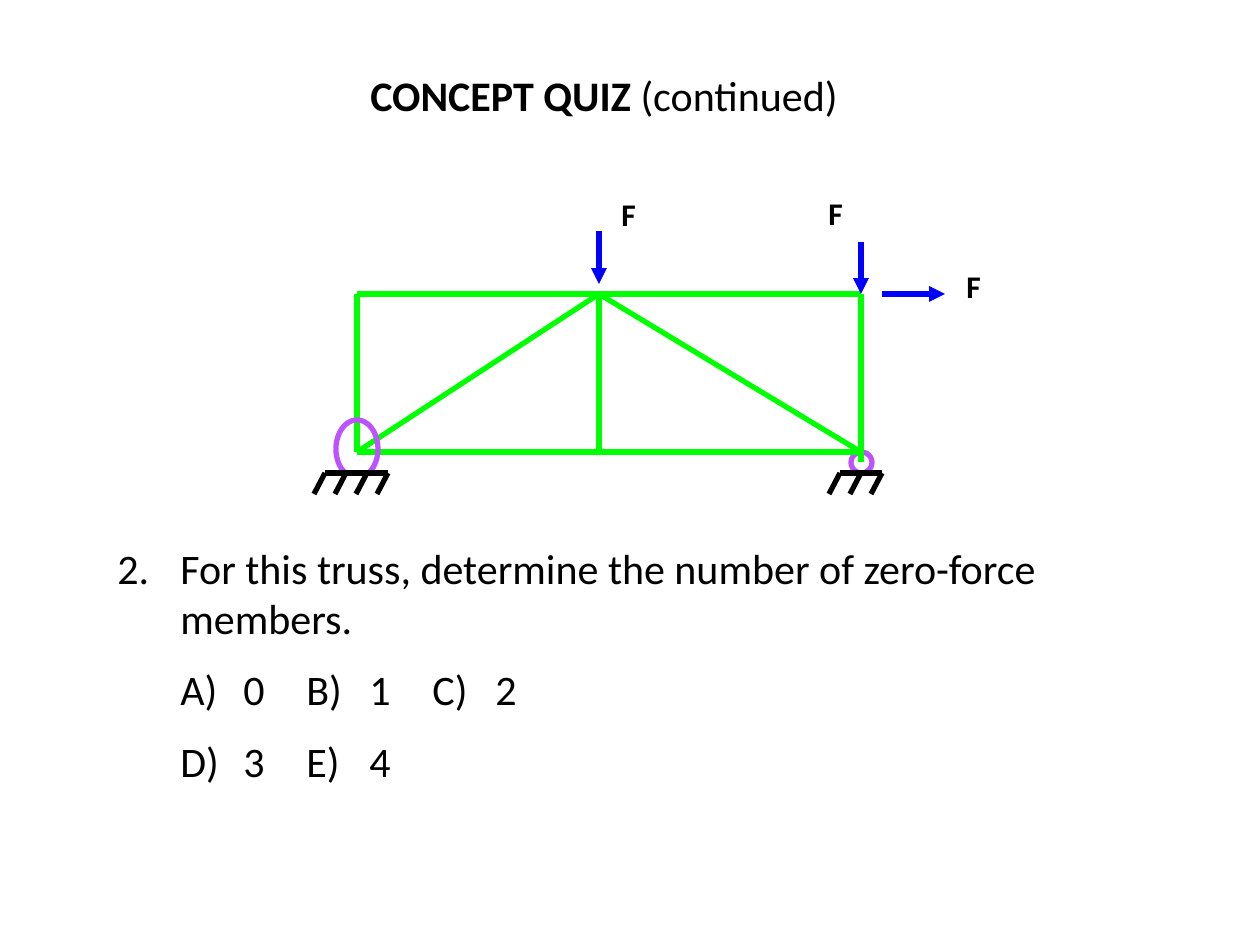
from dataclasses import dataclass
from math import cos, radians, sin

from lxml.etree import SubElement
from pptx import Presentation
from pptx.dml.color import RGBColor
from pptx.enum.shapes import MSO_CONNECTOR as Connector, MSO_SHAPE as Shape
from pptx.enum.text import PP_ALIGN as Align
from pptx.oxml.ns import qn
from pptx.util import Emu, Pt


@dataclass(frozen=True)
class Theme:
    """Colours, type sizes and line width of the slide."""
    font: str = "Calibri"
    text: str = "000000"
    paper: str = "FFFFFF"
    member: str = "00FF00"
    load: str = "0000FF"
    joint: str = "BD53FF"
    ground: str = "000000"
    body_size: int = 24
    label_size: int = 18
    stroke: int = 3


THEME = Theme()
LEFT, MIDDLE, RIGHT = 357, 599, 861
TOP, BOTTOM, GROUND = 294, 452, 473
HATCH_GAP, HATCH_SLANT, HATCH_DROP = 21, 11, 21
HANG = 63
ANSWER_STOPS = (126, 378, 441, 756, 819)


def px(length):
    """Turn pixels into EMU."""
    return Emu(round(length * 914400 / 126))


def style_line(line, color):
    """Give an outline its colour and width."""
    line.color.rgb = RGBColor.from_string(color)
    line.width = Pt(THEME.stroke)


def add_box(page, left, top, width, height):
    """Add a wrapping text box and return its text frame."""
    frame = page.shapes.add_textbox(px(left), px(top), px(width), px(height)).text_frame
    frame.word_wrap = True
    return frame


def add_span(para, text, size=THEME.body_size, bold=False):
    """Add formatted text to a paragraph."""
    span = para.add_run()
    span.text = text
    span.font.name = THEME.font
    span.font.size = Pt(size)
    span.font.bold = bold
    span.font.color.rgb = RGBColor.from_string(THEME.text)


def set_indent(para, margin, first):
    """Set the left margin and first-line indent of a paragraph."""
    properties = para._p.get_or_add_pPr()
    properties.set("marL", str(px(margin)))
    properties.set("indent", str(px(first)))
    return properties


def add_question(frame, number, text):
    """Write the numbered question in the first paragraph."""
    para = frame.paragraphs[0]
    para.space_before = Pt(THEME.body_size / 2)
    properties = set_indent(para, HANG, -HANG)
    SubElement(properties, qn("a:buFont"), typeface="+mj-lt")
    SubElement(properties, qn("a:buAutoNum"), type="arabicPeriod", startAt=str(number))
    add_span(para, text)


def add_answers(frame, text):
    """Write one row of answers on shared tab stops."""
    para = frame.add_paragraph()
    para.space_before = Pt(THEME.body_size / 2)
    stops = SubElement(set_indent(para, 0, HANG), qn("a:tabLst"))
    for stop in ANSWER_STOPS:
        SubElement(stops, qn("a:tab"), pos=str(px(stop)), algn="l")
    add_span(para, text)


def add_line(page, start, end, color, arrow=False):
    """Draw a straight line, with an arrowhead at its end if asked."""
    line = page.shapes.add_connector(Connector.STRAIGHT, *map(px, (*start, *end)))
    style_line(line.line, color)
    if arrow:
        SubElement(line.line._get_or_add_ln(), qn("a:tailEnd"), type="triangle")
    SubElement(line._element.spPr, qn("a:effectLst"))


def add_load(page, start, end, label_at):
    """Draw a force arrow and its label."""
    add_line(page, start, end, THEME.load, arrow=True)
    para = add_box(page, *label_at, 49, 59).paragraphs[0]
    add_span(para, "F", size=THEME.label_size, bold=True)


def add_ground(page, left, ticks):
    """Draw a hatched ground line."""
    right = left + (ticks - 1) * HATCH_GAP
    add_line(page, (left, GROUND), (right, GROUND), THEME.ground)
    for x in range(left, right + 1, HATCH_GAP):
        add_line(page, (x, GROUND), (x - HATCH_SLANT, GROUND + HATCH_DROP), THEME.ground)


def add_roller(page):
    """Draw the round roller under the right joint."""
    roller = page.shapes.add_shape(Shape.FLOWCHART_CONNECTOR, px(851), px(452), px(21), px(21))
    roller.shadow.inherit = False
    roller.fill.solid()
    roller.fill.fore_color.rgb = RGBColor.from_string(THEME.paper)
    style_line(roller.line, THEME.joint)


def add_pin(page):
    """Draw the open oval pin around the left joint."""
    points = [(px(LEFT + 21 * cos(radians(angle))), px(449 + 29 * sin(radians(angle))))
              for angle in range(123, 419, 5)]
    outline = page.shapes.build_freeform(*points[0])
    outline.add_line_segments(points[1:], close=False)
    pin = outline.convert_to_shape()
    pin.shadow.inherit = False
    pin.fill.background()
    style_line(pin.line, THEME.joint)


def add_truss(page):
    """Draw the members, supports and loads of the truss."""
    add_roller(page)
    crown = (MIDDLE, TOP)
    members = (
        (crown, (LEFT, BOTTOM)),
        ((LEFT, BOTTOM), (RIGHT, BOTTOM)),
        (crown, (RIGHT, BOTTOM)),
        ((LEFT, BOTTOM), (LEFT, TOP)),
        ((LEFT, TOP), (RIGHT, TOP)),
        ((RIGHT, TOP), (RIGHT, 462)),
        (crown, (MIDDLE, BOTTOM)),
    )
    for start, end in members:
        add_line(page, start, end, THEME.member)
    add_pin(page)
    add_ground(page, 325, ticks=4)
    add_ground(page, 840, ticks=3)
    add_load(page, (MIDDLE, 231), (MIDDLE, 284), label_at=(609, 189))
    add_load(page, (RIGHT, 242), (RIGHT, TOP), label_at=(816, 188))
    add_load(page, (882, TOP), (945, TOP), label_at=(954, 261))


def main():
    """Build and save the quiz slide."""
    deck = Presentation()
    deck.slide_width, deck.slide_height = px(1260), px(945)
    page = deck.slides.add_slide(deck.slide_layouts[6])

    title = add_box(page, 357, 63, 494, 63).paragraphs[0]
    title.alignment = Align.CENTER
    title.space_before = Pt(THEME.body_size / 2)
    add_span(title, "CONCEPT QUIZ ", bold=True)
    add_span(title, "(continued)")

    quiz = add_box(page, 105, 536, 1029, 267)
    add_question(quiz, 2, "For this truss, determine the number of zero-force members.")
    add_answers(quiz, "A)\t0\tB)\t1\tC)\t2")
    add_answers(quiz, "D)\t3\tE)\t4")

    add_truss(page)
    deck.save("out.pptx")


if __name__ == "__main__":
    main()
